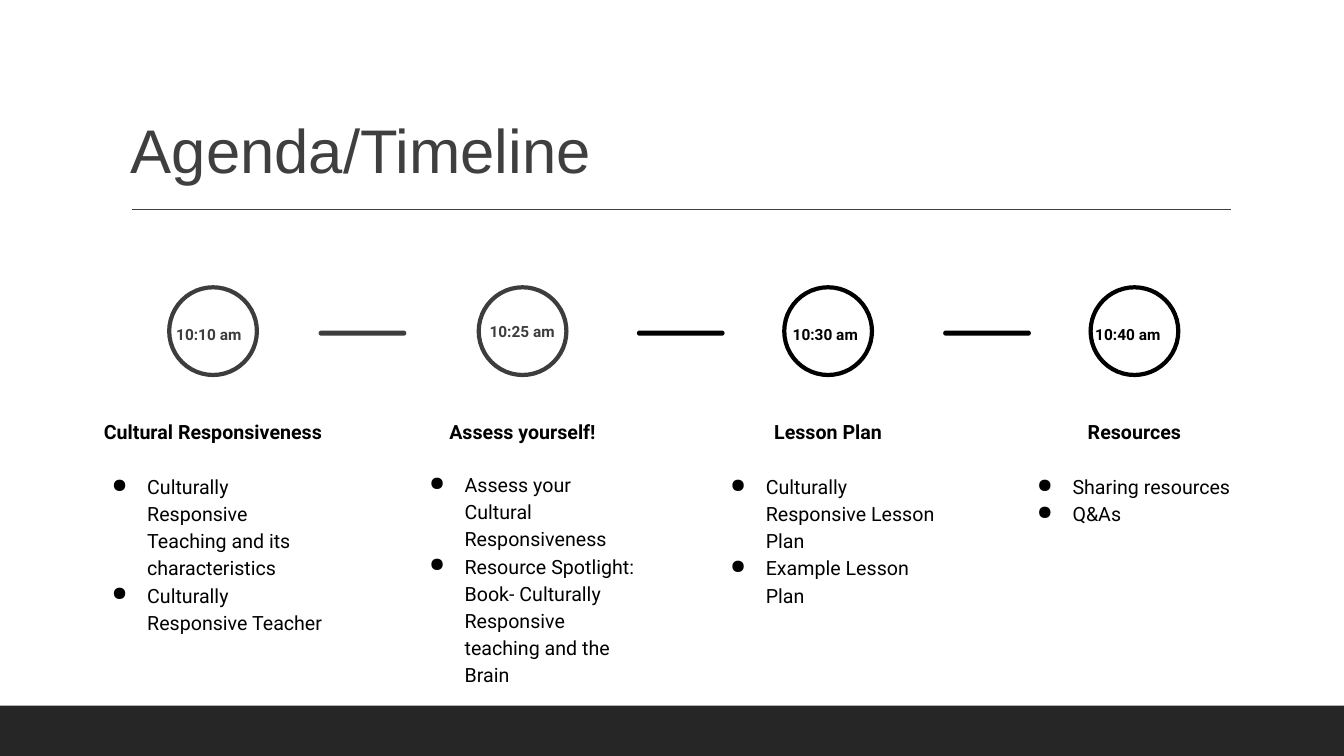
from lxml import etree
from pptx import Presentation
from pptx.dml.color import RGBColor
from pptx.enum.shapes import MSO_CONNECTOR, MSO_SHAPE
from pptx.enum.text import MSO_ANCHOR, PP_ALIGN
from pptx.oxml.ns import qn
from pptx.util import Cm, Pt

COLORS = {"black": "000000", "gray": "3D3D3D", "title": "3F3F3F", "band": "262626"}


def add_text(box, lines, size, color, font="Roboto", bold=False, align=PP_ALIGN.LEFT,
             anchor=MSO_ANCHOR.TOP, spacing=1.15, inset=(0.33, 0.33)):
    """Add a text box at box (left, top, width, height in cm), one paragraph per line."""
    tf = s.shapes.add_textbox(*[Cm(v) for v in box]).text_frame
    tf.word_wrap = True
    tf.vertical_anchor = anchor
    tf.margin_left = tf.margin_right = Cm(inset[0])
    tf.margin_top = tf.margin_bottom = Cm(inset[1])
    tf.text = "\n".join(lines)
    for p in tf.paragraphs:
        p.alignment = align
        p.line_spacing = spacing
        p.font.name = font
        p.font.size = Pt(size)
        p.font.bold = bold
        p.font.color.rgb = RGBColor.from_string(COLORS[color])
    return tf


def add_figure(kind, box, fill=None, line=None):
    sp = s.shapes.add_shape(kind, *[Cm(v) for v in box])
    sp.shadow.inherit = False
    if fill:
        sp.fill.solid()
        sp.fill.fore_color.rgb = RGBColor.from_string(COLORS[fill])
    else:
        sp.fill.background()
    if line:
        sp.line.color.rgb = RGBColor.from_string(COLORS[line])
        sp.line.width = Pt(3)
    else:
        sp.line.fill.background()
    return sp


prs = Presentation()
prs.slide_width, prs.slide_height = Cm(33.87), Cm(19.05)
s = prs.slides.add_slide(prs.slide_layouts[6])

# Title, rule and bottom band
add_figure(MSO_SHAPE.RECTANGLE, (0, 17.78, 33.87, 1.27), fill="band")
rule = s.shapes.add_connector(MSO_CONNECTOR.STRAIGHT, Cm(3.33), Cm(5.28), Cm(31.01), Cm(5.28))
rule.line.color.rgb = RGBColor.from_string(COLORS["title"])
rule.line.width = Pt(1)
etree.SubElement(rule._element.spPr, qn("a:effectLst"))
add_text((3.05, 0.79, 27.94, 4.04), ["Agenda/Timeline"], 44, "title", font="Arial",
         anchor=MSO_ANCHOR.BOTTOM, spacing=0.9, inset=(0.25, 0.13))

# Center, color, time, time box (left, top, width), heading, list box (left, top, width), items
steps = [
    (5.37, "gray", "10:10 am", (4.06, 7.85, 2.41), "Cultural Responsiveness", (2.11, 11.56, 6.5),
     ["Culturally Responsive Teaching and its characteristics", "Culturally Responsive Teacher"]),
    (13.17, "gray", "10:25 am", (11.89, 7.77, 2.54), "Assess yourself!", (10.11, 11.51, 6.32),
     ["Assess your Cultural Responsiveness",
      "Resource Spotlight: Book- Culturally Responsive teaching and the Brain"]),
    (20.87, "black", "10:30 am", (19.63, 7.85, 2.34), "Lesson Plan", (17.7, 11.56, 6.32),
     ["Culturally Responsive Lesson Plan", "Example Lesson Plan"]),
    (28.59, "black", "10:40 am", (27.18, 7.85, 2.49), "Resources", (25.43, 11.56, 6.32),
     ["Sharing resources", "Q&As"]),
]
CIRCLE, HEADING = 2.21, 6.32

for center, color, time, time_box, heading, list_box, items in steps:
    add_figure(MSO_SHAPE.OVAL, (center - CIRCLE / 2, 7.24, CIRCLE, CIRCLE), line=color)
    tf = add_text((*time_box, 1.19), [time], 11, color, bold=True, align=PP_ALIGN.CENTER)
    tf.paragraphs[0].space_after = Pt(21)
    add_text((center - HEADING / 2, 9.86, HEADING, 1.65), [heading], 14, "black", bold=True,
             align=PP_ALIGN.CENTER, anchor=MSO_ANCHOR.BOTTOM)
    tf = add_text((*list_box, 2.74), items, 14, "black")
    for p in tf.paragraphs:
        pPr = p._p.get_or_add_pPr()
        pPr.set("marL", str(Cm(1.27)))
        pPr.set("indent", str(Cm(-0.89)))
        bullet = etree.Element(qn("a:buChar"), char="●")
        pPr.find(qn("a:defRPr")).addprevious(bullet)

# Bars between the circles
for left, color in [(8.03, "gray"), (16.05, "black"), (23.77, "black")]:
    bar = add_figure(MSO_SHAPE.ROUNDED_RECTANGLE, (left, 8.33, 2.21, 0.13), fill=color)
    bar.adjustments[0] = 0.5

prs.save("out.pptx")
